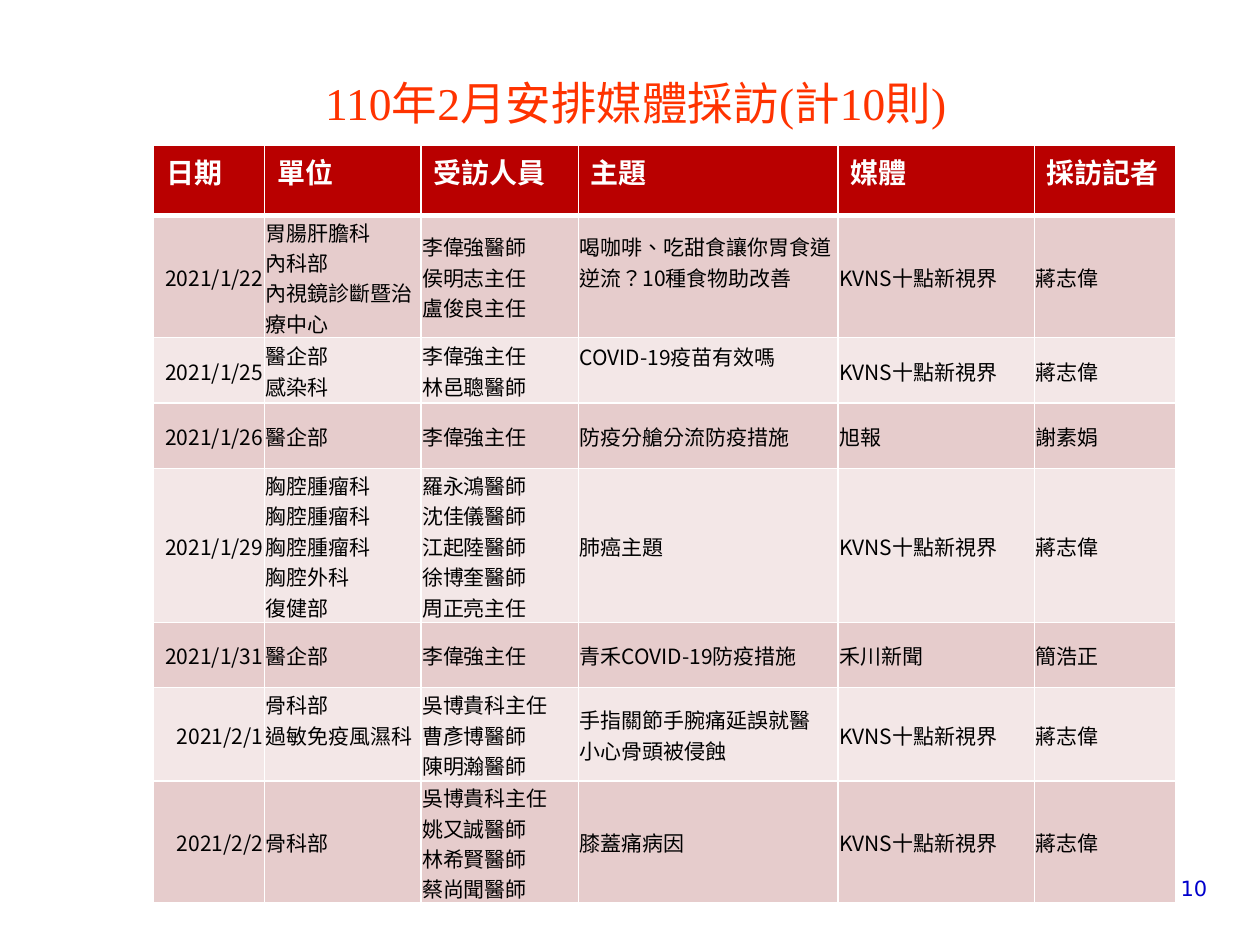
from dataclasses import dataclass

from lxml import etree
from pptx import Presentation
from pptx.dml.color import RGBColor
from pptx.enum.text import MSO_ANCHOR, MSO_AUTO_SIZE, PP_ALIGN
from pptx.oxml.ns import qn
from pptx.util import Inches, Pt

LEFT, CENTER, RIGHT, JUSTIFY = (
    PP_ALIGN.LEFT, PP_ALIGN.CENTER, PP_ALIGN.RIGHT, PP_ALIGN.JUSTIFY)
TOP, MIDDLE, BOTTOM = MSO_ANCHOR.TOP, MSO_ANCHOR.MIDDLE, MSO_ANCHOR.BOTTOM


@dataclass(frozen=True)
class Style:
    size: int
    color: str
    latin: str
    asian: str
    bold: bool = False


@dataclass(frozen=True)
class Theme:
    title: Style = Style(26, "FF3300", "Times New Roman", "Noto Sans CJK TC")
    number: Style = Style(12, "0000CC", "DejaVu Sans", "Noto Sans CJK TC")
    header: Style = Style(16, "FFFFFF", "Noto Sans CJK SC", "Noto Sans CJK SC", True)
    body: Style = Style(12, "000000", "Noto Sans CJK TC", "Noto Sans CJK TC")
    header_fill: str = "B90000"
    band_fills: tuple = ("E6CCCC", "F3E7E7")
    border: str = "FFFFFF"
    language: str = "zh-TW"


THEME = Theme()

HEADERS = ["日期", "單位", "受訪人員", "主題", "媒體", "採訪記者"]
COL_WIDTHS = [0.88, 1.24, 1.25, 2.06, 1.56, 1.12]
ROW_HEIGHTS = [0.56, 0.97, 0.52, 0.52, 1.22, 0.52, 0.74, 0.97]
LINE_HEIGHT = 0.24
TEN_SHOW = "KVNS十點新視界"

INTERVIEWS = [
    ("2021/1/22", "胃腸肝膽科\n內科部\n內視鏡診斷暨治療中心",
     "李偉強醫師\n侯明志主任\n盧俊良主任",
     "喝咖啡、吃甜食讓你胃食道逆流？10種食物助改善", TEN_SHOW, "蔣志偉"),
    ("2021/1/25", "醫企部\n感染科", "李偉強主任\n林邑聰醫師",
     "COVID-19疫苗有效嗎", TEN_SHOW, "蔣志偉"),
    ("2021/1/26", "醫企部", "李偉強主任", "防疫分艙分流防疫措施", "旭報", "謝素娟"),
    ("2021/1/29", "胸腔腫瘤科\n胸腔腫瘤科\n胸腔腫瘤科\n胸腔外科\n復健部",
     "羅永鴻醫師\n沈佳儀醫師\n江起陸醫師\n徐博奎醫師\n周正亮主任",
     "肺癌主題", TEN_SHOW, "蔣志偉"),
    ("2021/1/31", "醫企部", "李偉強主任", "青禾COVID-19防疫措施", "禾川新聞", "簡浩正"),
    ("2021/2/1", "骨科部\n過敏免疫風濕科", "吳博貴科主任\n曹彥博醫師\n陳明瀚醫師",
     "手指關節手腕痛延誤就醫\n小心骨頭被侵蝕", TEN_SHOW, "蔣志偉"),
    ("2021/2/2", "骨科部", "吳博貴科主任\n姚又誠醫師\n林希賢醫師\n蔡尚聞醫師",
     "膝蓋痛病因", TEN_SHOW, "蔣志偉"),
]
# (row, column) of cells whose text sits half a line higher
RAISED_CELLS = {(1, 3), (2, 3), (6, 1)}


def write(tf, text, style, align):
    """Write each line of text as a paragraph with one styled run."""
    for i, line in enumerate(text.split("\n")):
        p = tf.add_paragraph() if i else tf.paragraphs[0]
        p.alignment = align
        r = p.add_run()
        r.text = line
        r.font.size = Pt(style.size)
        r.font.bold = style.bold
        r.font.color.rgb = RGBColor.from_string(style.color)
        r.font.name = style.latin
        r_pr = r.font._element
        r_pr.set("lang", THEME.language)
        etree.SubElement(r_pr, qn("a:ea"), typeface=style.asian)


def set_borders(cell, bottom):
    tc_pr = cell._tc.get_or_add_tcPr()
    for side, width in (("L", 1), ("R", 1), ("T", 1), ("B", bottom)):
        ln = etree.SubElement(tc_pr, qn(f"a:ln{side}"), w=str(Pt(width)))
        fill = etree.SubElement(ln, qn("a:solidFill"))
        etree.SubElement(fill, qn("a:srgbClr"), val=THEME.border)


def fill_cell(cell, color):
    cell.fill.solid()
    cell.fill.fore_color.rgb = RGBColor.from_string(color)


def add_title(s, box, text):
    sp = s.shapes.title
    sp.left, sp.top, sp.width, sp.height = map(Inches, box)
    tf = sp.text_frame
    tf.word_wrap = True
    tf.auto_size = MSO_AUTO_SIZE.NONE
    tf.vertical_anchor = BOTTOM
    write(tf, text, THEME.title, CENTER)


def add_page_number(s, box, text):
    tf = s.shapes.add_textbox(*map(Inches, box)).text_frame
    tf.word_wrap = True
    write(tf, text, THEME.number, RIGHT)


def add_interview_table(s, box):
    table = s.shapes.add_table(
        len(ROW_HEIGHTS), len(HEADERS), *map(Inches, box)).table
    for column, width in zip(table.columns, COL_WIDTHS):
        column.width = Inches(width)
    for row, height in zip(table.rows, ROW_HEIGHTS):
        row.height = Inches(height)

    # Header row
    for j, text in enumerate(HEADERS):
        cell = table.cell(0, j)
        cell.vertical_anchor = TOP
        write(cell.text_frame, text, THEME.header, JUSTIFY)
        set_borders(cell, 3)
        fill_cell(cell, THEME.header_fill)

    # Banded interview rows
    for i, interview in enumerate(INTERVIEWS, 1):
        for j, text in enumerate(interview):
            cell = table.cell(i, j)
            cell.vertical_anchor = MIDDLE
            cell.margin_left = cell.margin_right = cell.margin_top = Inches(0.01)
            cell.margin_bottom = Inches(LINE_HEIGHT if (i, j) in RAISED_CELLS else 0)
            write(cell.text_frame, text, THEME.body, LEFT if j else RIGHT)
            set_borders(cell, 1)
            fill_cell(cell, THEME.band_fills[(i - 1) % 2])


def main():
    prs = Presentation()
    prs.slide_width, prs.slide_height = Inches(10), Inches(7.5)
    s = prs.slides.add_slide(prs.slide_layouts[5])
    add_title(s, (0.67, 0.76, 8.75, 0.32), "110年2月安排媒體採訪(計10則)")
    add_page_number(s, (8.94, 6.9, 0.74, 0.3), "10")
    add_interview_table(s, (1.22, 1.15, sum(COL_WIDTHS), sum(ROW_HEIGHTS)))
    prs.save("out.pptx")


if __name__ == "__main__":
    main()
